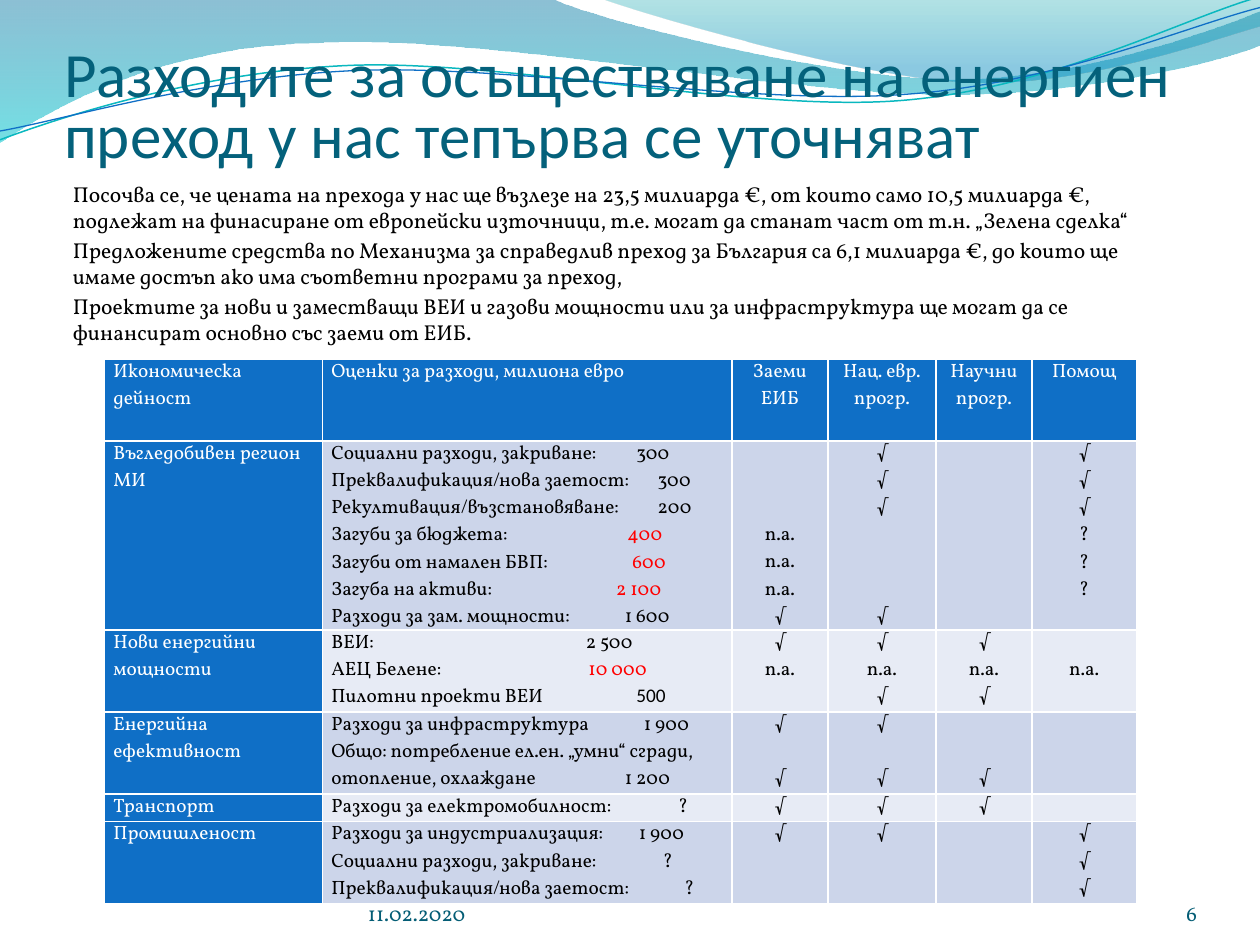
from lxml import etree
from pptx import Presentation
from pptx.dml.color import RGBColor
from pptx.enum.lang import MSO_LANGUAGE_ID
from pptx.enum.text import MSO_ANCHOR, PP_ALIGN
from pptx.oxml import parse_xml
from pptx.oxml.ns import nsdecls, qn
from pptx.util import Inches, Pt

BULGARIAN = MSO_LANGUAGE_ID.BULGARIAN
LEFT, CENTER, RIGHT = PP_ALIGN.LEFT, PP_ALIGN.CENTER, PP_ALIGN.RIGHT
TOP, BOTTOM = MSO_ANCHOR.TOP, MSO_ANCHOR.BOTTOM
SERIF, SANS = "Vollkorn", "Calibri"
BLUE, TEAL, FOOTER = "0F6FC6", "04617B", "045D75"
WHITE, BLACK, RED = "FFFFFF", "000000", "FF0000"
BANDS = ("CCD5EA", "E7EBF5")
TABLE_SIZE, TABLE_LINE = 11, 15.5  # points
UNITS = 1000  # outline units per inch

# Content
TITLE = "Разходите за осъществяване на енергиен преход у нас тепърва се уточняват"
INTRO = [
    "Посочва се, че цената на прехода у нас ще възлезе на 23,5 милиарда €, от които само 10,5 милиарда €, подлежат на финасиране от европейски източници, т.е. могат да станат част от т.н. „Зелена сделка“",
    "Предложените средства по Механизма за справедлив преход за България са 6,1 милиарда €, до които ще имаме достъп ако има съответни програми за преход,",
    "Проектите за нови и заместващи ВЕИ и газови мощности или за инфраструктура ще могат да се финансират основно със заеми от ЕИБ.",
]
DATE, PAGE = "11.02.2020", "6"
HEADER = ["Икономическа дейност", "Оценки за разходи, милиона евро", "Заеми ЕИБ",
          "Нац. евр. прогр.", "Научни прогр.", "Помощ"]
COLUMNS = [1.73, 3.25, 0.76, 0.86, 0.76, 0.83]
ROWS = [0.65, 1.5, 0.65, 0.65, 0.22, 0.65]
# activity, costs (label, amount, tab stop, colour, font), marks per line by column
ACTIVITIES = [
    ("Въгледобивен регион МИ",
     [("Социални разходи, закриване:", "300", 2.42, BLACK, SERIF),
      ("Преквалификация/нова заетост:", "300", 2.59, BLACK, SERIF),
      ("Рекултивация/възстановяване:", "200", 2.59, BLACK, SERIF),
      ("Загуби за бюджета:", "400", 2.35, RED, SERIF),
      ("Загуби от намален БВП:", "600", 2.39, RED, SERIF),
      ("Загуба на активи:", "2 100", 2.26, RED, SERIF),
      ("Разходи за зам. мощности:", "1 600", 2.33, BLACK, SERIF)],
     [["", "", "", "n.a.", "n.a.", "n.a.", "√"], ["√", "√", "√", "", "", "", "√"],
      [], ["√", "√", "√", "?", "?", "?"]]),
    ("Нови енергийни мощности",
     [("ВЕИ:", "2 500", 2.02, BLACK, SERIF),
      ("АЕЦ Белене:", "10 000", 2.04, RED, SERIF),
      ("Пилотни проекти ВЕИ", "500", 2.42, BLACK, SANS)],
     [["√", "n.a."], ["√", "n.a.", "√"], ["√", "n.a.", "√"], ["", "n.a."]]),
    ("Енергийна ефективност",
     [("Разходи за инфраструктура", "1 900", 2.48, BLACK, SERIF),
      ("Общо: потребление ел.ен. „умни“ сгради, отопление, охлаждане", "1 200",
       2.33, BLACK, SERIF)],
     [["√", "", "√"], ["√", "", "√"], ["", "", "√"], []]),
    ("Транспорт",
     [("Разходи за електромобилност:", "?", 2.75, BLACK, SERIF)],
     [["√"], ["√"], ["√"], []]),
    ("Промишленост",
     [("Разходи за индустриализация:", "1 900", 2.44, BLACK, SERIF),
      ("Социални разходи, закриване:", "?", 2.63, BLACK, SERIF),
      ("Преквалификация/нова заетост:", "?", 2.8, BLACK, SERIF)],
     [["√"], ["√"], [], ["√", "√", "√"]]),
]

# Waves: start point, then cubic segments (three points) or straight ones (one point)
WAVE_BANDS = [
    ([[(0, 0)], [(4.4, 0)], [(4.76, 0.17), (6.64, 0.63), (7.58, 0.63)],
      [(8.53, 0.63), (9.58, 0.26), (10, 0.09)], [(10, 0.36)],
      [(9.83, 0.44), (8.7, 0.76), (7.46, 0.75)], [(6.22, 0.75), (3.82, 0.28), (2.57, 0.34)],
      [(1.29, 0.36), (0.46, 0.83), (0, 1.13)]],
     [(0, "0074A1", 45), (100, "00C6CF", 55)]),
    ([[(4.79, 0)], [(5.09, 0.11), (6.82, 0.62), (7.69, 0.65)],
      [(8.56, 0.69), (9.61, 0.32), (10, 0.21)], [(10, 0)]],
     [(0, "00A1A9", 30), (80, "008BBF", 45)]),
]
WAVE_LINES = [
    ([[(0, 1.11)], [(0.48, 0.93), (1.58, 0.57), (2.77, 0.52)],
      [(3.95, 0.47), (5.93, 0.89), (7.13, 0.8)], [(8.33, 0.71), (9.38, 0.15), (9.98, -0.02)]],
     "0AB8BF", 0.85),
    ([[(0, 1.04)], [(0.47, 0.96), (1.64, 0.61), (2.83, 0.56)],
      [(4.03, 0.51), (5.97, 0.84), (7.17, 0.75)], [(8.36, 0.67), (9.41, 0.21), (10, 0.06)]],
     BLUE, 0.75),
]


def rgb(value):
    return RGBColor.from_string(value)


def add_wave(slide, segments, close):
    """Build the outline through the end points, then bend its cubic segments."""
    outline = [[(round(x * UNITS), round(y * UNITS)) for x, y in part] for part in segments]
    ends = [part[-1] for part in outline]
    builder = slide.shapes.build_freeform(*ends[0], scale=Inches(1) / UNITS)
    builder.add_line_segments(ends[1:], close=close)
    wave = builder.convert_to_shape()
    wave.shadow.inherit = False
    left, top = (min(axis) for axis in zip(*ends))
    straight = list(wave._element.iter(qn("a:lnTo")))
    for line, part in zip(straight, outline[1:]):
        if len(part) == 3:
            points = "".join(f'<a:pt x="{x - left}" y="{y - top}"/>' for x, y in part)
            line.getparent().replace(line, parse_xml(
                f'<a:cubicBezTo {nsdecls("a")}>{points}</a:cubicBezTo>'))
    return wave


def gradient(stops):
    marks = "".join(f'<a:gs pos="{pos * 1000}"><a:srgbClr val="{color}">'
                    f'<a:alpha val="{alpha * 1000}"/></a:srgbClr></a:gs>'
                    for pos, color, alpha in stops)
    return parse_xml(f'<a:gradFill {nsdecls("a")}><a:gsLst>{marks}</a:gsLst>'
                     '<a:lin ang="5400000" scaled="0"/></a:gradFill>')


def style(paragraph, size, color, font=SERIF, align=LEFT):
    paragraph.font.size, paragraph.font.name = Pt(size), font
    paragraph.font.color.rgb = rgb(color)
    paragraph.alignment = align


def add_text(paragraph, text):
    run = paragraph.add_run()
    run.text = text
    run.font.language_id = BULGARIAN
    return run


def next_paragraph(frame, index):
    return frame.add_paragraph() if index else frame.paragraphs[0]


def add_box(slide, box, texts, size, color, font=SERIF, align=LEFT, anchor=BOTTOM,
            insets=(0, 0, 0, 0), line=None, before=0):
    frame = slide.shapes.add_textbox(*map(Inches, box)).text_frame
    frame.word_wrap, frame.vertical_anchor = True, anchor
    (frame.margin_left, frame.margin_top,
     frame.margin_right, frame.margin_bottom) = map(Inches, insets)
    for index, text in enumerate(texts):
        paragraph = next_paragraph(frame, index)
        style(paragraph, size, color, font, align)
        paragraph.line_spacing, paragraph.space_before = line, Pt(before)
        add_text(paragraph, text)


def format_cell(cell, fill):
    cell.margin_left = cell.margin_right = Inches(0.07)
    cell.margin_top = cell.margin_bottom = 0
    cell.fill.solid()
    cell.fill.fore_color.rgb = rgb(fill)
    for index, side in enumerate("LRTB"):
        cell._tc.get_or_add_tcPr().insert(index, parse_xml(
            f'<a:ln{side} {nsdecls("a")} w="{Pt(1)}"><a:solidFill>'
            f'<a:srgbClr val="{WHITE}"/></a:solidFill></a:ln{side}>'))


def fill_label(cell, text, align=LEFT):
    paragraph = cell.text_frame.paragraphs[0]
    style(paragraph, TABLE_SIZE, WHITE, align=align)
    add_text(paragraph, text)


def fill_costs(cell, costs):
    for index, (label, amount, stop, color, font) in enumerate(costs):
        paragraph = next_paragraph(cell.text_frame, index)
        style(paragraph, TABLE_SIZE, BLACK)
        paragraph._p.get_or_add_pPr().insert(0, parse_xml(
            f'<a:tabLst {nsdecls("a")}><a:tab pos="{Inches(stop)}" algn="l"/></a:tabLst>'))
        add_text(paragraph, label + "\t")
        figure = add_text(paragraph, amount)
        figure.font.color.rgb, figure.font.name = rgb(color), font


def fill_marks(cell, marks):
    """Put each mark on its cost line; skipped lines become spacing."""
    shown = [(line, mark) for line, mark in enumerate(marks) if mark]
    previous = -1
    for index, (line, mark) in enumerate(shown):
        paragraph = next_paragraph(cell.text_frame, index)
        style(paragraph, TABLE_SIZE, BLACK, align=CENTER)
        gap = Pt(TABLE_LINE * (line - previous - 1))
        if index:
            paragraph.space_before = gap
        else:
            cell.margin_top = gap
        paragraph.add_run().text = mark
        previous = line
    if not shown:
        etree.SubElement(cell.text_frame.paragraphs[0]._p, qn("a:endParaRPr"),
                         sz=str(TABLE_SIZE * 100))


prs = Presentation()
prs.slide_width, prs.slide_height = Inches(10), Inches(7.5)
slide = prs.slides.add_slide(prs.slide_layouts[6])

# Waves along the top
for segments, stops in WAVE_BANDS:
    band = add_wave(slide, segments, close=True)
    band.line.fill.background()
    band._element.spPr.find(qn("a:custGeom")).addnext(gradient(stops))
for segments, color, width in WAVE_LINES:
    wave_line = add_wave(slide, segments, close=False)
    wave_line.fill.background()
    wave_line.line.color.rgb, wave_line.line.width = rgb(color), Pt(width)

# Title, introduction and footer
add_box(slide, (0.51, 0.21, 9, 1.15), [TITLE], 36, TEAL, SANS,
        insets=(0, 0.05, 0, 0), line=Pt(35))
add_box(slide, (0.48, 1.39, 9, 1.27), INTRO, 12.3, BLACK, anchor=TOP,
        insets=(0.1, 0.05, 0.1, 0.05), line=Pt(14.8), before=2.4)
add_box(slide, (2.92, 6.95, 3.67, 0.4), [DATE], 12, FOOTER)
add_box(slide, (8.67, 6.95, 0.83, 0.4), [PAGE], 12, FOOTER, align=RIGHT)

# Cost table
table = slide.shapes.add_table(len(ROWS), len(COLUMNS), Inches(0.83), Inches(2.85),
                               Inches(sum(COLUMNS)), Inches(sum(ROWS))).table
for column, width in zip(table.columns, COLUMNS):
    column.width = Inches(width)
for row, height in zip(table.rows, ROWS):
    row.height = Inches(height)
for column, heading in enumerate(HEADER):
    format_cell(table.cell(0, column), BLUE)
    fill_label(table.cell(0, column), heading, CENTER if column > 1 else LEFT)
for row, (activity, costs, marks) in enumerate(ACTIVITIES, 1):
    for column in range(len(COLUMNS)):
        format_cell(table.cell(row, column), BANDS[(row - 1) % 2] if column else BLUE)
    fill_label(table.cell(row, 0), activity)
    fill_costs(table.cell(row, 1), costs)
    for column, column_marks in enumerate(marks, 2):
        fill_marks(table.cell(row, column), column_marks)

prs.save("out.pptx")
